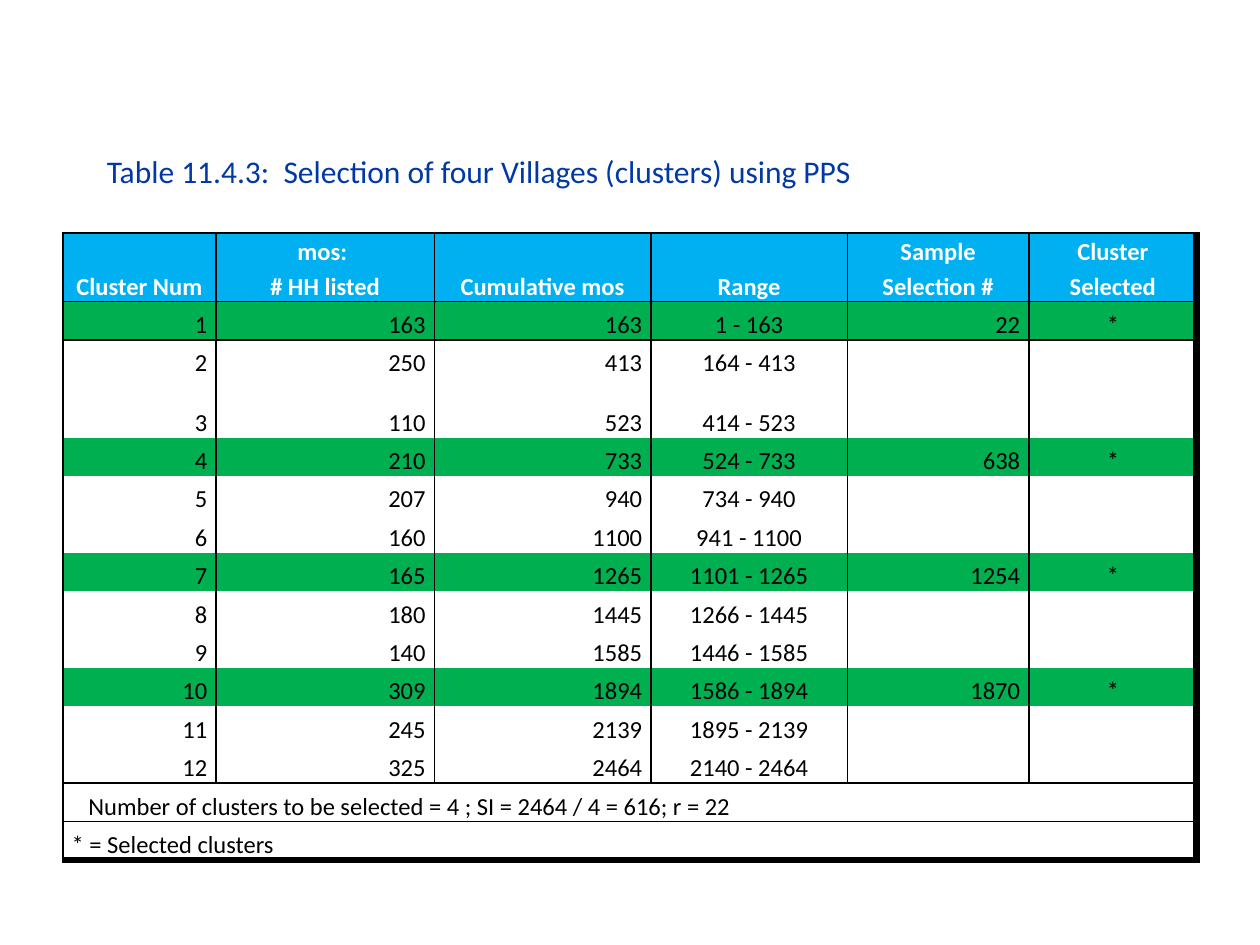
from dataclasses import dataclass

import pptx
import pptx.dml.color
import pptx.enum.text
import pptx.oxml
import pptx.util
from lxml import etree

Pt = pptx.util.Pt
ALIGN = pptx.enum.text.PP_ALIGN
BOTTOM = pptx.enum.text.MSO_ANCHOR.BOTTOM
FONT = "Calibri"
BLACK, WHITE, BLUE, GREEN, NAVY = "000000", "FFFFFF", "00B0F0", "00B050", "0039A6"
THIN, THICK = 1, 4.5
NO_STYLE = "{2D5ABB26-0587-4C30-8999-92F81FD0307C}"
NAMESPACE = "http://schemas.openxmlformats.org/drawingml/2006/main"

COLUMN_WIDTHS = [87.4, 124.8, 123.8, 112.2, 103.8, 96]
HEADER_HEIGHT, ROW_HEIGHT, TALL_ROW_HEIGHT = 38.9, 21.95, 33.8
TALL_CLUSTER = 3
HEADERS = ["Cluster Num", "mos: \n# HH listed", "Cumulative mos", "Range",
           "Sample Selection #", "Cluster Selected"]
NUMBER_COLUMNS = {0, 1, 2, 4}
LAST_COLUMN = len(HEADERS) - 1
HOUSEHOLDS = [163, 250, 110, 210, 207, 160, 165, 180, 140, 309, 245, 325]
SELECTIONS = {1: 22, 4: 638, 7: 1254, 10: 1870}


@dataclass(frozen=True)
class CellFormat:
    alignment: ALIGN = ALIGN.LEFT
    line_spacing: float = 1.15
    space_after: float = 0
    color: str = BLACK
    bold: bool = False
    fill: str | None = None
    margin_left: float = 5


def rgb(value: str) -> pptx.dml.color.RGBColor:
    return pptx.dml.color.RGBColor.from_string(value)


def set_attributes(target: object, values: dict) -> None:
    for name, value in values.items():
        setattr(target, name, value)


def style_font(font, size: float, color: str, bold: bool = False) -> None:
    set_attributes(font, {"name": FONT, "size": Pt(size), "bold": bold})
    font.color.rgb = rgb(color)


def add_borders(cell, **widths: float) -> None:
    """Draw the named sides (L, R, T, B) with the given widths in points."""
    properties = cell._tc.get_or_add_tcPr()
    for side in "LRTB":
        if side in widths:
            properties.append(pptx.oxml.parse_xml(
                f'<a:ln{side} xmlns:a="{NAMESPACE}" w="{Pt(widths[side])}">'
                f'<a:solidFill><a:srgbClr val="{BLACK}"/></a:solidFill></a:ln{side}>'))


def write_cell(cell, text: str, look: CellFormat) -> None:
    set_attributes(cell, {
        "margin_left": Pt(look.margin_left), "margin_right": Pt(5),
        "margin_top": 0, "margin_bottom": 0, "vertical_anchor": BOTTOM})
    if look.fill:
        cell.fill.solid()
        cell.fill.fore_color.rgb = rgb(look.fill)
    else:
        cell.fill.background()
    cell.text = text
    for paragraph in cell.text_frame.paragraphs:
        set_attributes(paragraph, {
            "alignment": look.alignment, "line_spacing": look.line_spacing,
            "space_after": Pt(look.space_after)})
        for run in paragraph.runs:
            style_font(run.font, 14, look.color, look.bold)
        if not text:
            etree.SubElement(paragraph._p, f"{{{NAMESPACE}}}endParaRPr", sz="1400")


def right_width(column: int) -> float:
    return THICK if column == LAST_COLUMN else THIN


def fill_header(table) -> None:
    look = CellFormat(ALIGN.CENTER, color=WHITE, bold=True, fill=BLUE)
    for column, text in enumerate(HEADERS):
        cell = table.cell(0, column)
        add_borders(cell, L=THIN, R=right_width(column), T=THIN, B=THIN)
        write_cell(cell, text, look)


def fill_clusters(table) -> None:
    """Write one row per cluster, deriving running totals and ranges."""
    total = 0
    for cluster, households in enumerate(HOUSEHOLDS, start=1):
        first, total = total + 1, total + households
        selection = SELECTIONS.get(cluster)
        values = [cluster, households, total, f"{first} - {total}",
                  selection or "", "*" if selection else ""]
        edges = {}
        if cluster == 1:
            edges["T"] = THIN
        if cluster == len(HOUSEHOLDS):
            edges["B"] = THIN
        for column, value in enumerate(values):
            cell = table.cell(cluster, column)
            add_borders(cell, L=THIN, R=right_width(column), **edges)
            alignment = ALIGN.RIGHT if column in NUMBER_COLUMNS else ALIGN.CENTER
            write_cell(cell, str(value), CellFormat(
                alignment, space_after=4, fill=GREEN if selection else None))


def fill_notes(table) -> None:
    summary_row = len(HOUSEHOLDS) + 1
    legend_row = summary_row + 1
    look = CellFormat(line_spacing=1.05, space_after=8)

    summary = table.cell(summary_row, 0)
    summary.merge(table.cell(summary_row, LAST_COLUMN))
    add_borders(summary, L=THIN, R=THICK, T=THIN, B=THIN)
    write_cell(
        summary, "Number of clusters to be selected = 4 ; SI = 2464 / 4 = 616; r = 22",
        CellFormat(line_spacing=1.05, space_after=8, margin_left=14.5))

    table.cell(legend_row, 0).merge(table.cell(legend_row, 2))
    table.cell(legend_row, 3).merge(table.cell(legend_row, 4))
    outer_sides = {0: {"L": THIN}, LAST_COLUMN: {"R": THICK}}
    for column in range(LAST_COLUMN + 1):
        cell = table.cell(legend_row, column)
        add_borders(cell, T=THIN, B=THICK, **outer_sides.get(column, {}))
        write_cell(cell, "* = Selected clusters" if column == 0 else "", look)


def add_cluster_table(slide) -> None:
    heights = [HEADER_HEIGHT] + [ROW_HEIGHT] * (len(HOUSEHOLDS) + 2)
    heights[TALL_CLUSTER] = TALL_ROW_HEIGHT
    frame = slide.shapes.add_table(
        len(heights), len(COLUMN_WIDTHS), Pt(36), Pt(133.2),
        Pt(sum(COLUMN_WIDTHS)), Pt(sum(heights)))
    table = frame.table
    set_attributes(table, {"first_row": False, "horz_banding": False})
    table._tbl.tblPr.find(f"{{{NAMESPACE}}}tableStyleId").text = NO_STYLE
    for column, width in zip(table.columns, COLUMN_WIDTHS):
        column.width = Pt(width)
    for row, height in zip(table.rows, heights):
        row.height = Pt(height)
    fill_header(table)
    fill_clusters(table)
    fill_notes(table)


def add_caption(slide) -> None:
    box = slide.shapes.add_textbox(Pt(54), Pt(83.5), Pt(563.8), Pt(51))
    box.text_frame.word_wrap = True
    run = box.text_frame.paragraphs[0].add_run()
    run.text = "Table 11.4.3:  Selection of four Villages (clusters) using PPS"
    style_font(run.font, 18, NAVY)


def main() -> None:
    presentation = pptx.Presentation()
    set_attributes(presentation, {"slide_width": Pt(720), "slide_height": Pt(540)})
    slide = presentation.slides.add_slide(presentation.slide_layouts[6])
    add_cluster_table(slide)
    add_caption(slide)
    presentation.save("out.pptx")


if __name__ == "__main__":
    main()
